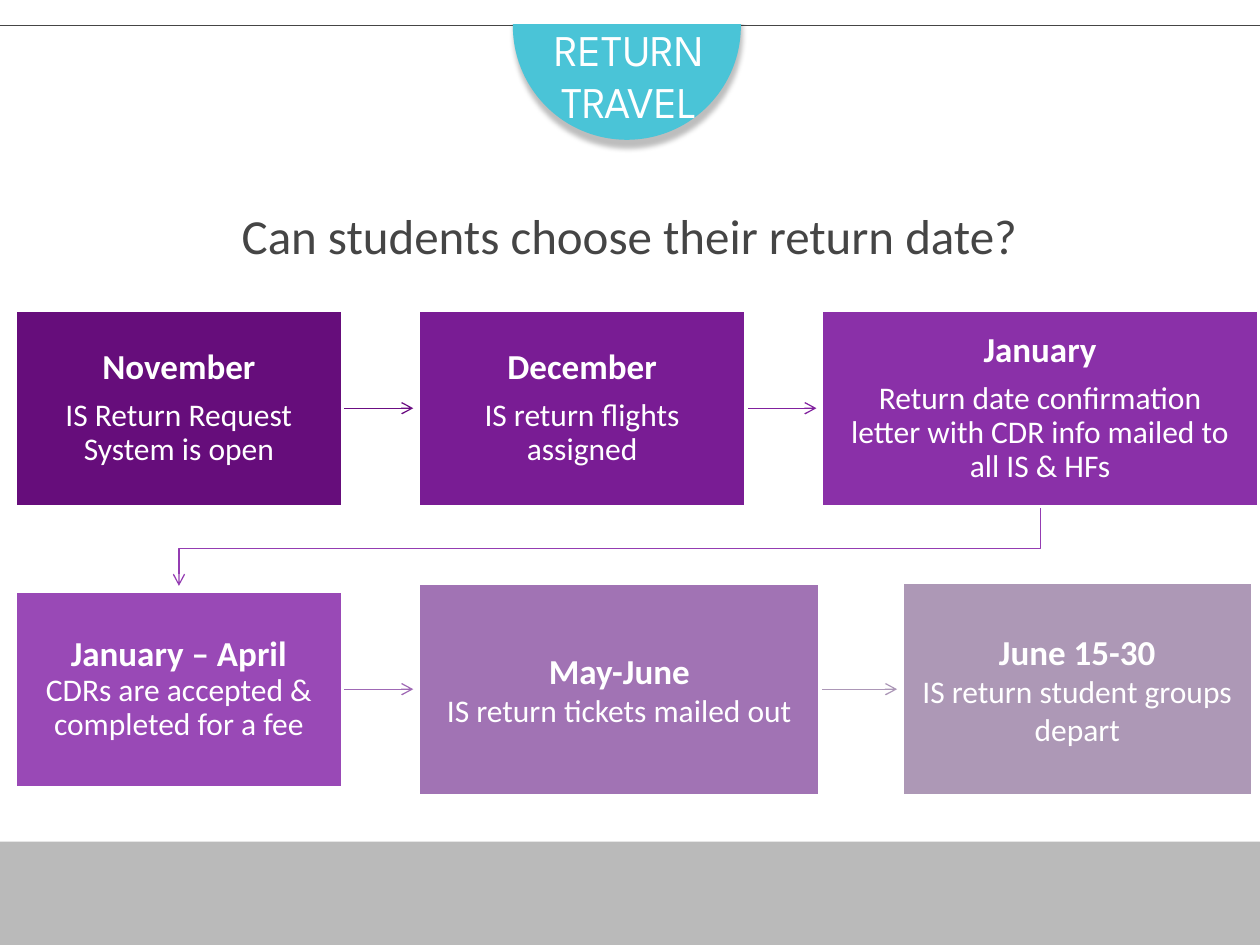
import pptx
import pptx.util
import pptx.dml.color
import pptx.enum.shapes
import pptx.enum.text
import pptx.oxml
import pptx.oxml.ns

Inches, Pt = pptx.util.Inches, pptx.util.Pt
RGBColor = pptx.dml.color.RGBColor
MSO_SHAPE = pptx.enum.shapes.MSO_SHAPE
STRAIGHT = pptx.enum.shapes.MSO_CONNECTOR.STRAIGHT
MIDDLE = pptx.enum.text.MSO_ANCHOR.MIDDLE
CENTER = pptx.enum.text.PP_ALIGN.CENTER

WHITE = RGBColor(0xFF, 0xFF, 0xFF)
CHARCOAL = RGBColor(0x45, 0x45, 0x45)
TEAL = RGBColor(0x4A, 0xC4, 0xD7)

# Content
TITLE = "RETURN TRAVEL"
QUESTION = "Can students choose their return date?"
LOOSE = {"line_spacing": 0.9, "space_after": Pt(7)}
TIGHT = {"line_spacing": 0.9}
PLAIN = {}
# month, detail, width, height, fill, colour of the arrow leaving, spacing
ROWS = [
    [("November", "IS Return Request System is open", 2.6, 1.56,
      RGBColor(0x66, 0x0D, 0x7B), RGBColor(0x6B, 0x0D, 0x82), LOOSE),
     ("December", "IS return flights assigned", 2.6, 1.56,
      RGBColor(0x79, 0x1C, 0x94), RGBColor(0x81, 0x21, 0x9E), LOOSE),
     ("January", "Return date confirmation letter with CDR info mailed to all IS & HFs",
      3.47, 1.56, RGBColor(0x8A, 0x30, 0xA8), RGBColor(0x94, 0x3C, 0xB2), LOOSE)],
    [("January – April", "CDRs are accepted & completed for a fee", 2.6, 1.56,
      RGBColor(0x99, 0x49, 0xB6), RGBColor(0x9F, 0x69, 0xB5), TIGHT),
     ("May-June", "IS return tickets mailed out", 3.19, 1.69,
      RGBColor(0xA1, 0x73, 0xB4), RGBColor(0xAC, 0x97, 0xB7), PLAIN),
     ("June 15-30", "IS return student groups depart", 2.78, 1.7,
      RGBColor(0xAD, 0x98, 0xB6), None, PLAIN)],
]

# Layout
WIDTH, HEIGHT = 10, 7.5
LEFTS = [(0.12, 3.32, 6.52), (0.12, 3.32, 7.16)]
MIDDLES = (3.24, 5.47)
ARROW_GAP = 0.04
RULE_Y = 0.2
BAND_TOP = 6.68

deck = pptx.Presentation()
deck.slide_width, deck.slide_height = Inches(WIDTH), Inches(HEIGHT)
slide = deck.slides.add_slide(deck.slide_layouts[5])
shapes = slide.shapes


def add_xml(parent, tag, content="", **attributes):
    values = " ".join(f'{name}="{value}"' for name, value in attributes.items())
    parent.append(pptx.oxml.parse_xml(
        f'<a:{tag} {pptx.oxml.ns.nsdecls("a")} {values}>{content}</a:{tag}>'))


def add_solid(kind, left, top, width, height, colour):
    solid = shapes.add_shape(kind, *map(Inches, (left, top, width, height)))
    solid.shadow.inherit = False
    solid.fill.solid()
    solid.fill.fore_color.rgb = colour
    solid.line.fill.background()
    return solid


def add_line(start, end, colour, weight):
    line = shapes.add_connector(STRAIGHT, *map(Inches, start + end))
    line.line.color.rgb, line.line.width = colour, Pt(weight)
    add_xml(line._element.spPr, "effectLst")
    return line


def add_arrowhead(arrow):
    add_xml(arrow.line._get_or_add_ln(), "tailEnd", type="arrow")


def write(paragraph, text, spacing=PLAIN, **font):
    paragraph.alignment = CENTER
    for name, value in spacing.items():
        setattr(paragraph, name, value)
    run = paragraph.add_run()
    run.text = text
    colour = font.pop("colour", WHITE)
    for name, value in font.items():
        setattr(run.font, name, value)
    run.font.color.rgb = colour


# Rule, footer band and half-circle badge
add_line((0, RULE_Y), (WIDTH, RULE_Y), CHARCOAL, 0.25)
band = add_solid(MSO_SHAPE.RECTANGLE, 0, BAND_TOP, WIDTH, HEIGHT - BAND_TOP, CHARCOAL)
add_xml(band._element.spPr.find(".//" + pptx.oxml.ns.qn("a:srgbClr")), "alpha", val=37000)
badge = add_solid(MSO_SHAPE.OVAL, 4.07, -0.7, 1.81, 1.81, TEAL)
add_xml(badge._element.spPr.find(pptx.oxml.ns.qn("a:effectLst")), "outerShdw",
        '<a:srgbClr val="000000"><a:alpha val="25000"/></a:srgbClr>',
        blurRad=Pt(3.1), dist=Pt(5), dir=80 * 60000, algn="tl", rotWithShape=0)
add_solid(MSO_SHAPE.RECTANGLE, 3.75, 0, 2.98, RULE_Y - 0.01, WHITE)

# Title, brought in front of its badge
title = shapes.title
title.left, title.top, title.width, title.height = map(Inches, (4.1, 0.34, 1.79, 0.51))
title.text_frame.auto_size = pptx.enum.text.MSO_AUTO_SIZE.NONE
title.text_frame.vertical_anchor = MIDDLE
write(title.text_frame.paragraphs[0], TITLE, size=Pt(25), name="League Spartan")
shapes._spTree.append(title._element)

# Question
question = shapes.add_textbox(*map(Inches, (1.38, 1.58, 7.23, 0.57))).text_frame
question.word_wrap = True
write(question.paragraphs[0], QUESTION, size=Pt(28), name="Calibri", colour=CHARCOAL)

# Arrows within each row
for steps, lefts, middle in zip(ROWS, LEFTS, MIDDLES):
    for step, left, next_left in zip(steps, lefts, lefts[1:]):
        add_arrowhead(add_line((left + step[2], middle),
                               (next_left - ARROW_GAP, middle), step[5], 0.75))

# Elbow arrow from the end of the first row to the start of the second
last, first = ROWS[0][-1], ROWS[1][0]
from_x, to_x = LEFTS[0][-1] + last[2] / 2, LEFTS[1][0] + first[2] / 2
from_y = MIDDLES[0] + last[3] / 2
to_y = MIDDLES[1] - first[3] / 2 - ARROW_GAP
turn_y = (from_y + to_y) / 2 + 0.02
corners = [(Inches(x), Inches(y)) for x, y in
           ((from_x, from_y), (from_x, turn_y), (to_x, turn_y), (to_x, to_y))]
builder = shapes.build_freeform(*corners[0])
builder.add_line_segments(corners[1:], close=False)
elbow = builder.convert_to_shape()
elbow.shadow.inherit = False
elbow.fill.background()
elbow.line.color.rgb, elbow.line.width = last[5], Pt(0.75)
add_arrowhead(elbow)

# Step boxes
for steps, lefts, middle in zip(ROWS, LEFTS, MIDDLES):
    for (month, detail, width, height, fill, _, spacing), left in zip(steps, lefts):
        box = add_solid(MSO_SHAPE.RECTANGLE, left, middle - height / 2, width, height, fill)
        box.line.color.rgb, box.line.width = WHITE, Pt(2)
        frame = box.text_frame
        frame.word_wrap, frame.vertical_anchor = True, MIDDLE
        for side in ("left", "top", "right", "bottom"):
            setattr(frame, f"margin_{side}", Inches(0.16))
        write(frame.paragraphs[0], month, spacing, size=Pt(20), name="Calibri", bold=True)
        write(frame.add_paragraph(), detail, spacing, size=Pt(18), name="Calibri")

deck.save("out.pptx")
